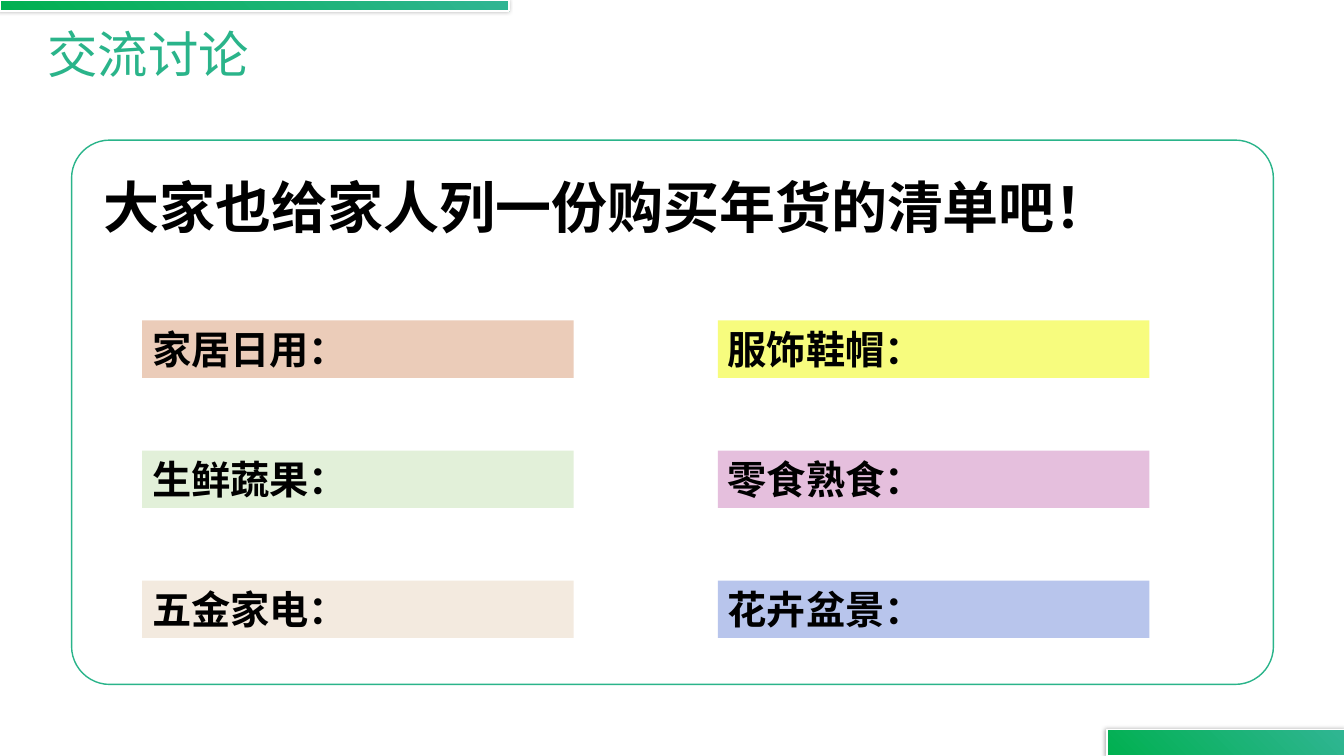
import pptx
import pptx.util
import pptx.dml.color
import pptx.enum.shapes
import pptx.enum.text
import pptx.oxml
import pptx.oxml.ns
import lxml.etree

Inches = pptx.util.Inches
Pt = pptx.util.Pt
Shapes = pptx.enum.shapes.MSO_SHAPE

TITLE = "交流讨论"
PROMPT = "大家也给家人列一份购买年货的清单吧！"
CATEGORIES = [
    ("家居日用：", "EBCCB9"),
    ("服饰鞋帽：", "F7FC7E"),
    ("生鲜蔬果：", "E2F0D9"),
    ("零食熟食：", "E5BFDD"),
    ("五金家电：", "F3EADF"),
    ("花卉盆景：", "B8C5EC"),
]
COLORS = {
    "accent": "2AB48A",
    "bar_start": "00B050",
    "bar_end": "30B593",
    "text": "000000",
    "white": "FFFFFF",
}
CORNER_BARS = [(0, 0, 5.05, 0.11), (10.98, 7.24, 2.36, 0.26)]
FRAME = (0.71, 1.39, 11.92, 5.4)
TITLE_BOX = (0.37, 0.29, 3.02, 0.55)
PROMPT_BOX = (0.93, 1.66, 12.4, 0.77)
COLUMNS = 2
GRID_LEFT, GRID_TOP = 1.41, 3.18
COLUMN_STEP, ROW_STEP = 5.71, 1.29
LABEL_WIDTH, LABEL_HEIGHT = 4.28, 0.57


def rgb(value):
    return pptx.dml.color.RGBColor.from_string(value)


def write_text(shape, text, size, color=COLORS["text"], bold=False, spacing=1.0):
    frame = shape.text_frame
    frame.word_wrap = True
    frame.auto_size = pptx.enum.text.MSO_AUTO_SIZE.NONE
    frame.vertical_anchor = pptx.enum.text.MSO_ANCHOR.MIDDLE
    paragraph = frame.paragraphs[0]
    paragraph.alignment = pptx.enum.text.PP_ALIGN.LEFT
    paragraph.line_spacing = spacing
    run = paragraph.add_run()
    run.text = text
    run.font.name = "Arial"
    run.font.size = Pt(size)
    run.font.bold = bold
    run.font.color.rgb = rgb(color)


def add_panel(slide, kind, box, fill=None, line=None):
    shape = slide.shapes.add_shape(kind, *map(Inches, box))
    shape.shadow.inherit = False
    if fill:
        shape.fill.solid()
        shape.fill.fore_color.rgb = rgb(fill)
    else:
        shape.fill.background()
    if line:
        shape.line.color.rgb = rgb(line)
        shape.line.width = Pt(1)
    else:
        shape.line.fill.background()
    return shape


def add_corner_bar(slide, box):
    bar = add_panel(slide, Shapes.RECTANGLE, box, line=COLORS["white"])
    bar.fill.gradient()
    bar.fill.gradient_angle = 45
    for stop, name in zip(bar.fill.gradient_stops, ("bar_start", "bar_end")):
        stop.color.rgb = rgb(COLORS[name])
    effects = bar.element.spPr.find(pptx.oxml.ns.qn("a:effectLst"))
    effects.append(pptx.oxml.parse_xml(
        f'<a:outerShdw {pptx.oxml.ns.nsdecls("a")} blurRad="{Pt(3)}" dist="{Pt(1)}" dir="10800000">'
        '<a:srgbClr val="000000"><a:alpha val="30000"/></a:srgbClr></a:outerShdw>'
    ))


def main():
    presentation = pptx.Presentation()
    presentation.slide_width = Inches(13.33)
    presentation.slide_height = Inches(7.5)
    slide = presentation.slides.add_slide(presentation.slide_layouts[5])

    for box in CORNER_BARS:
        add_corner_bar(slide, box)
    frame = add_panel(slide, Shapes.ROUNDED_RECTANGLE, FRAME, line=COLORS["accent"])
    frame.adjustments[0] = 0.07

    title = slide.shapes.title
    title.left, title.top, title.width, title.height = map(Inches, TITLE_BOX)
    write_text(title, TITLE, 36, color=COLORS["accent"], spacing=0.9)

    prompt = slide.shapes.add_textbox(*map(Inches, PROMPT_BOX))
    write_text(prompt, PROMPT, 40, bold=True)

    for index, (text, fill) in enumerate(CATEGORIES):
        row, column = divmod(index, COLUMNS)
        left = GRID_LEFT + column * COLUMN_STEP
        top = GRID_TOP + row * ROW_STEP
        label = add_panel(slide, Shapes.RECTANGLE, (left, top, LABEL_WIDTH, LABEL_HEIGHT), fill=fill)
        write_text(label, text, 28, bold=True)

    presentation.save("out.pptx")


if __name__ == "__main__":
    main()
